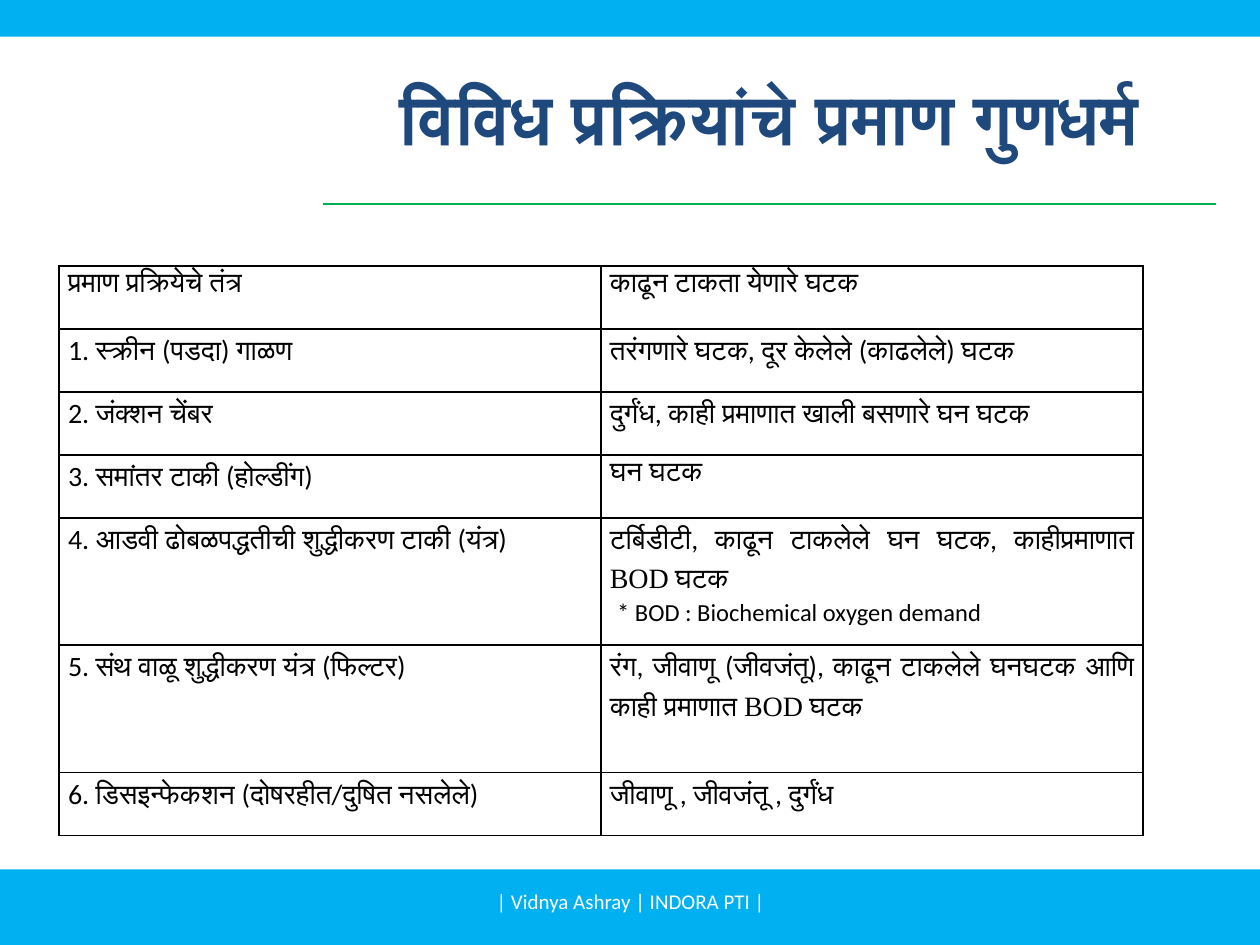
from dataclasses import dataclass
from itertools import product

from lxml import etree
from pptx import Presentation
from pptx.dml.color import RGBColor
from pptx.enum.shapes import MSO_CONNECTOR, MSO_SHAPE
from pptx.enum.text import MSO_ANCHOR, MSO_AUTO_SIZE, PP_ALIGN
from pptx.oxml.ns import qn
from pptx.util import Inches, Pt

RECTANGLE = MSO_SHAPE.RECTANGLE
STRAIGHT = MSO_CONNECTOR.STRAIGHT
TOP, MIDDLE = MSO_ANCHOR.TOP, MSO_ANCHOR.MIDDLE
LEFT, CENTER, JUSTIFY = PP_ALIGN.LEFT, PP_ALIGN.CENTER, PP_ALIGN.JUSTIFY
NO_AUTOFIT = MSO_AUTO_SIZE.NONE

SKY, GREEN, NAVY = "00B0F0", "00B050", "1F497D"
BLACK, WHITE = "000000", "FFFFFF"
SANS, SERIF = "Calibri", "Times New Roman"


@dataclass(frozen=True)
class Box:
    left: float
    top: float
    width: float
    height: float

    def lengths(self) -> tuple:
        return tuple(Inches(v) for v in (self.left, self.top, self.width, self.height))


@dataclass(frozen=True)
class Process:
    system: str
    removed: str
    height: float = 0.5


ABBREVIATION = "BOD"
PROCESSES = [
    Process("प्रमाण प्रक्रियेचे तंत्र", "काढून टाकता येणारे घटक"),
    Process("1. स्क्रीन (पडदा) गाळण", "तरंगणारे घटक, दूर केलेले (काढलेले) घटक"),
    Process("2. जंक्शन चेंबर", "दुर्गंध, काही प्रमाणात खाली बसणारे घन घटक "),
    Process("3. समांतर टाकी (होल्डींग)", "घन घटक"),
    Process("4. आडवी ढोबळपद्धतीची शुद्धीकरण टाकी (यंत्र)",
            "टर्बिडीटी, काढून टाकलेले घन घटक, काहीप्रमाणात BOD घटक", 1.01),
    Process("5. संथ वाळू शुद्धीकरण यंत्र (फिल्टर)",
            "रंग, जीवाणू (जीवजंतू), काढून टाकलेले घनघटक आणि काही प्रमाणात BOD घटक", 1.01),
    Process("6. डिसइन्फेकशन (दोषरहीत/दुषित नसलेले)", "जीवाणू , जीवजंतू , दुर्गंध"),
]
BANDS = [Box(0, 6.9, 10, 0.6), Box(0, 0, 10, 0.29)]
COLUMN_WIDTH = 4.3


def color(value: str) -> RGBColor:
    return RGBColor.from_string(value)


def write(frame, *runs: tuple[str, str], size: float, ink: str = BLACK,
          bold: bool = False, align=LEFT, anchor=TOP, spacing: float = 1.0,
          after: float = 0) -> None:
    frame.word_wrap = True
    frame.vertical_anchor = anchor
    paragraph = frame.paragraphs[0]
    paragraph.alignment = align
    paragraph.line_spacing = spacing
    paragraph.space_before = Pt(0)
    paragraph.space_after = Pt(after)
    for text, typeface in runs:
        run = paragraph.add_run()
        run.text = text
        run.font.name = typeface
        run.font.size = Pt(size)
        run.font.bold = bold
        run.font.color.rgb = color(ink)


def draw_band(slide, box: Box) -> None:
    band = slide.shapes.add_shape(RECTANGLE, *box.lengths())
    band.shadow.inherit = False
    band.fill.solid()
    band.fill.fore_color.rgb = color(SKY)
    band.line.fill.background()


def draw_rule(slide, left: float, right: float, y: float) -> None:
    rule = slide.shapes.add_connector(
        STRAIGHT, Inches(left), Inches(y), Inches(right), Inches(y))
    rule.line.color.rgb = color(GREEN)
    rule.line.width = Pt(0.75)
    etree.SubElement(rule._element.spPr, qn("a:effectLst"))


def draw_title(slide, text: str, box: Box) -> None:
    title = slide.shapes.title
    title.left, title.top, title.width, title.height = box.lengths()
    title.text_frame.auto_size = NO_AUTOFIT
    write(title.text_frame, (text, SANS), size=40, ink=NAVY, bold=True,
          align=CENTER, anchor=MIDDLE)


def draw_label(slide, text: str, box: Box, **style) -> None:
    label = slide.shapes.add_textbox(*box.lengths())
    write(label.text_frame, (text, SANS), **style)


def border(cell) -> None:
    properties = cell._tc.get_or_add_tcPr()
    for side in ("a:lnL", "a:lnR", "a:lnT", "a:lnB"):
        edge = etree.SubElement(properties, qn(side), w=str(Pt(1)))
        fill = etree.SubElement(edge, qn("a:solidFill"))
        etree.SubElement(fill, qn("a:srgbClr"), val=BLACK)


def split_runs(text: str) -> list[tuple[str, str]]:
    before, term, after = text.partition(ABBREVIATION)
    parts = [(before, SANS), (term, SERIF), (after, SANS)]
    return [part for part in parts if part[0]]


def draw_processes(slide, left: float, top: float) -> None:
    box = Box(left, top, 2 * COLUMN_WIDTH, sum(p.height for p in PROCESSES))
    table = slide.shapes.add_table(len(PROCESSES), 2, *box.lengths()).table
    table.first_row = table.horz_banding = False
    for column in table.columns:
        column.width = Inches(COLUMN_WIDTH)
    for row, process in zip(table.rows, PROCESSES):
        row.height = Inches(process.height)
    for row, column in product(range(len(PROCESSES)), range(2)):
        process = PROCESSES[row]
        cell = table.cell(row, column)
        border(cell)
        cell.fill.background()
        cell.margin_left = cell.margin_right = Inches(0.07)
        cell.margin_top = cell.margin_bottom = 0
        text = (process.system, process.removed)[column]
        write(cell.text_frame, *split_runs(text), size=16, align=JUSTIFY,
              spacing=1.15, after=10)


def main() -> None:
    deck = Presentation()
    deck.slide_width, deck.slide_height = Inches(10), Inches(7.5)
    slide = deck.slides.add_slide(deck.slide_layouts[5])
    for band in BANDS:
        draw_band(slide, band)
    draw_rule(slide, 2.56, 9.65, 1.62)
    draw_title(slide, "विविध प्रक्रियांचे प्रमाण गुणधर्म", Box(2.56, 0.3, 7.09, 1.25))
    draw_label(slide, "* BOD : Biochemical oxygen demand", Box(4.8, 4.69, 5.2, 0.34), size=14)
    draw_label(slide, "| Vidnya Ashray | INDORA PTI |", Box(3.42, 6.95, 3.17, 0.4),
               size=12, ink=WHITE, align=CENTER, anchor=MIDDLE)
    draw_processes(slide, 0.47, 2.11)
    deck.save("out.pptx")


if __name__ == "__main__":
    main()
